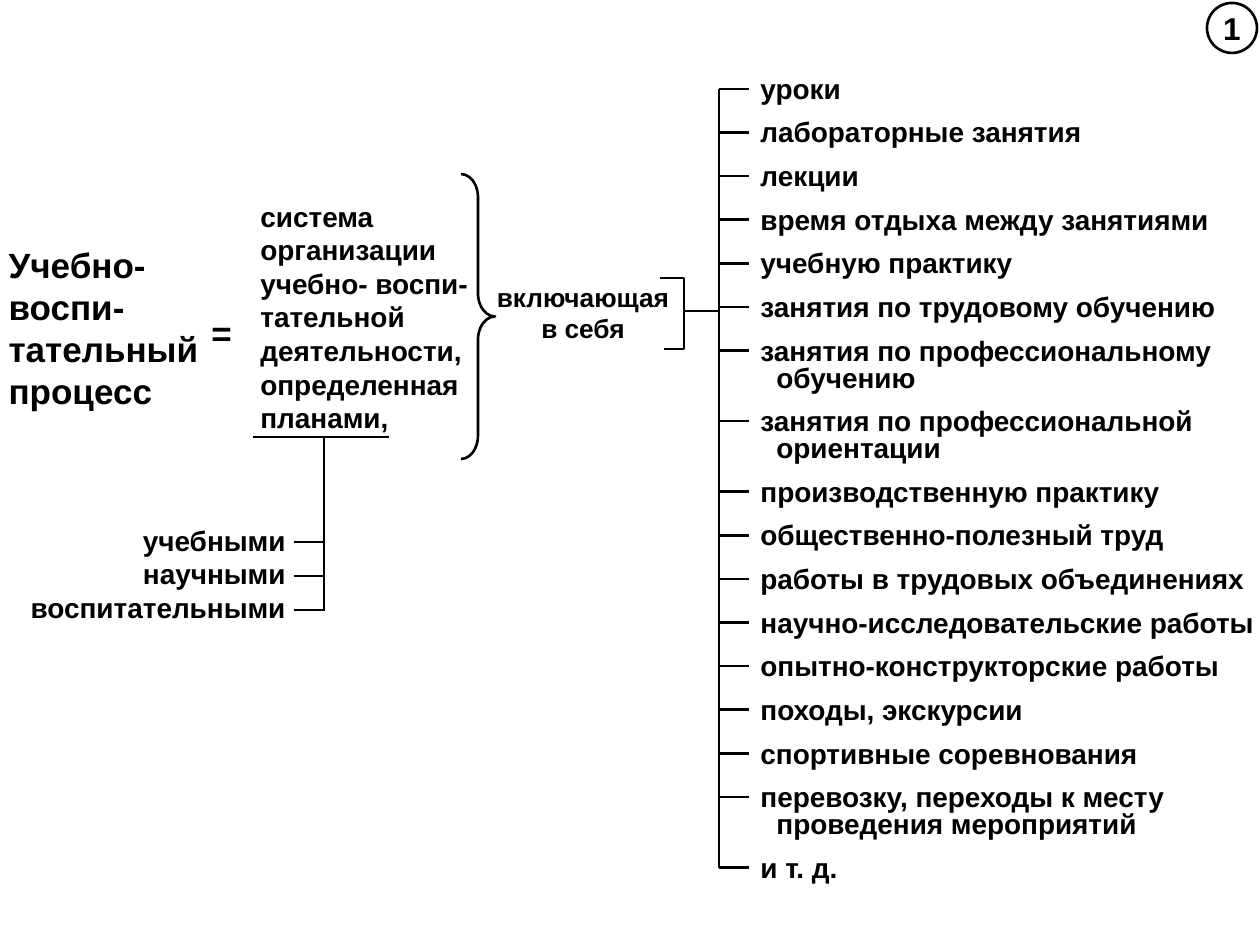
from dataclasses import dataclass

from lxml import etree
from pptx import Presentation
from pptx import util as u
from pptx.dml.color import RGBColor
from pptx.enum import shapes, text
from pptx.oxml.ns import qn

PX_PER_INCH = 126


@dataclass(frozen=True)
class Theme:
    font: str = "Arial"
    ink: RGBColor = RGBColor(0, 0, 0)
    stroke: float = 1.5
    title: int = 20
    number: int = 18
    body: int = 16
    link: int = 15


THEME = Theme()
LEFT, CENTER, RIGHT = text.PP_ALIGN.LEFT, text.PP_ALIGN.CENTER, text.PP_ALIGN.RIGHT

TERM = ["Учебно-", "воспи-", "тательный", "процесс"]
DEFINITION = ["система", "организации", "учебно- воспи-", "тательной",
              "деятельности,", "определенная", "планами,"]
PLANS = ["учебными", "научными", "воспитательными"]
# Each activity is a tuple of its lines
ACTIVITIES = [
    ("уроки",),
    ("лабораторные занятия",),
    ("лекции",),
    ("время отдыха между занятиями",),
    ("учебную практику",),
    ("занятия по трудовому обучению",),
    ("занятия по профессиональному", "обучению"),
    ("занятия по профессиональной", "ориентации"),
    ("производственную практику",),
    ("общественно-полезный труд",),
    ("работы в трудовых объединениях",),
    ("научно-исследовательские работы",),
    ("опытно-конструкторские работы",),
    ("походы, экскурсии",),
    ("спортивные соревнования",),
    ("перевозку, переходы к месту", "проведения мероприятий"),
    ("и т. д.",),
]


def px(length):
    return u.Emu(round(length * 914400 / PX_PER_INCH))


def box_emu(box):
    return [px(side) for side in box]


def write(frame, lines, size, align=LEFT):
    """Fill a text frame, one paragraph a line, and return the paragraphs."""
    frame.word_wrap = False
    frame.auto_size = text.MSO_AUTO_SIZE.NONE
    for index, line in enumerate(lines):
        paragraph = frame.paragraphs[0] if index == 0 else frame.add_paragraph()
        paragraph.alignment = align
        run = paragraph.add_run()
        run.text = line
        run.font.name, run.font.size, run.font.bold = THEME.font, u.Pt(size), True
        run.font.color.rgb = THEME.ink
    return frame.paragraphs


def add_label(slide, box, lines, size, align=LEFT):
    label = slide.shapes.add_textbox(*box_emu(box))
    return write(label.text_frame, lines, size, align)


def add_line(slide, x1, y1, x2, y2):
    line = slide.shapes.add_connector(
        shapes.MSO_CONNECTOR.STRAIGHT, px(x1), px(y1), px(x2), px(y2))
    line.line.color.rgb = THEME.ink
    line.line.width = u.Pt(THEME.stroke)
    etree.SubElement(line._element.spPr, qn("a:effectLst"))


def outline(shape):
    shape.shadow.inherit = False
    shape.fill.background()
    shape.line.color.rgb = THEME.ink
    shape.line.width = u.Pt(THEME.stroke)
    return shape


def term(slide, box):
    """The defined term, as the slide title, and the equals sign."""
    x, y, w, h = box
    title = slide.shapes.title
    title.left, title.top, title.width, title.height = box_emu(box)
    title.text_frame.vertical_anchor = text.MSO_ANCHOR.TOP
    write(title.text_frame, TERM, THEME.title)
    add_label(slide, (x + 203, y + 68, 45, 54), ["="], THEME.title)


def definition(slide, box):
    """The definition with its underline and closing brace."""
    x, y, w, h = box
    add_label(slide, box, DEFINITION, THEME.body)
    add_line(slide, x + 5, y + 244, x + 141, y + 244)
    brace = outline(slide.shapes.add_shape(
        shapes.MSO_SHAPE.RIGHT_BRACE, *box_emu((x + 213, y - 19, 34, 285))))
    brace.adjustments[0] = 0.69


def plans(slide, box):
    """The kinds of plans, hung from a stem on their right."""
    x, y, w, h = box
    stem, pitch = x + w + 26, 34
    add_label(slide, box, PLANS, THEME.body, RIGHT)
    last = y + 25 + pitch * (len(PLANS) - 1)
    add_line(slide, stem, y - 79, stem, last + 1)
    for index in range(len(PLANS)):
        tick = y + 25 + pitch * index
        add_line(slide, stem - 30, tick, stem, tick)


def inclusion(slide, box):
    """The linking words with a bracket that leads to the activities."""
    x, y, w, h = box
    add_label(slide, box, ["включающая", "в себя"], THEME.link, CENTER)
    edge, top, bottom = x + 200, y + 3, y + 74
    builder = slide.shapes.build_freeform(px(edge - 24), px(top))
    builder.add_line_segments(
        [(px(edge), px(top)), (px(edge), px(bottom)), (px(edge - 20), px(bottom))],
        close=False)
    outline(builder.convert_to_shape())
    add_line(slide, edge, y + 36, edge + 35, y + 36)


def activities(slide, box):
    """The list of activities, each with a tick on the common stem."""
    x, y, w, h = box
    stem, first, pitch, extra = x - 29, y + 34, 43.6, 27
    lines = [line for item in ACTIVITIES for line in item]
    paragraphs = iter(add_label(slide, box, lines, THEME.body))
    tick = first
    for item in ACTIVITIES:
        add_line(slide, stem, tick, stem + 30, tick)
        last = tick
        tick += pitch + extra * (len(item) - 1)
        for index in range(len(item)):
            paragraph = next(paragraphs)
            paragraph.line_spacing = 0.8 if index else 1.3
            if index:
                paragraph._p.get_or_add_pPr().set("marL", str(px(16)))
    add_line(slide, stem, first, stem, last)


def slide_number(slide, box):
    """The circled number in the corner."""
    circle = outline(slide.shapes.add_shape(shapes.MSO_SHAPE.OVAL, *box_emu(box)))
    frame = circle.text_frame
    frame.margin_left = frame.margin_right = frame.margin_top = frame.margin_bottom = 0
    frame.vertical_anchor = text.MSO_ANCHOR.MIDDLE
    write(frame, ["1"], THEME.number, CENTER)


def main():
    deck = Presentation()
    deck.slide_width, deck.slide_height = u.Inches(10), u.Inches(7.5)
    slide = deck.slides.add_slide(deck.slide_layouts[5])
    term(slide, (-4, 237, 234, 180))
    definition(slide, (248, 193, 234, 248))
    plans(slide, (16, 517, 282, 113))
    inclusion(slide, (484, 275, 198, 76))
    activities(slide, (748, 55, 522, 837))
    slide_number(slide, (1207, 3, 50, 50))
    deck.save("out.pptx")


if __name__ == "__main__":
    main()
